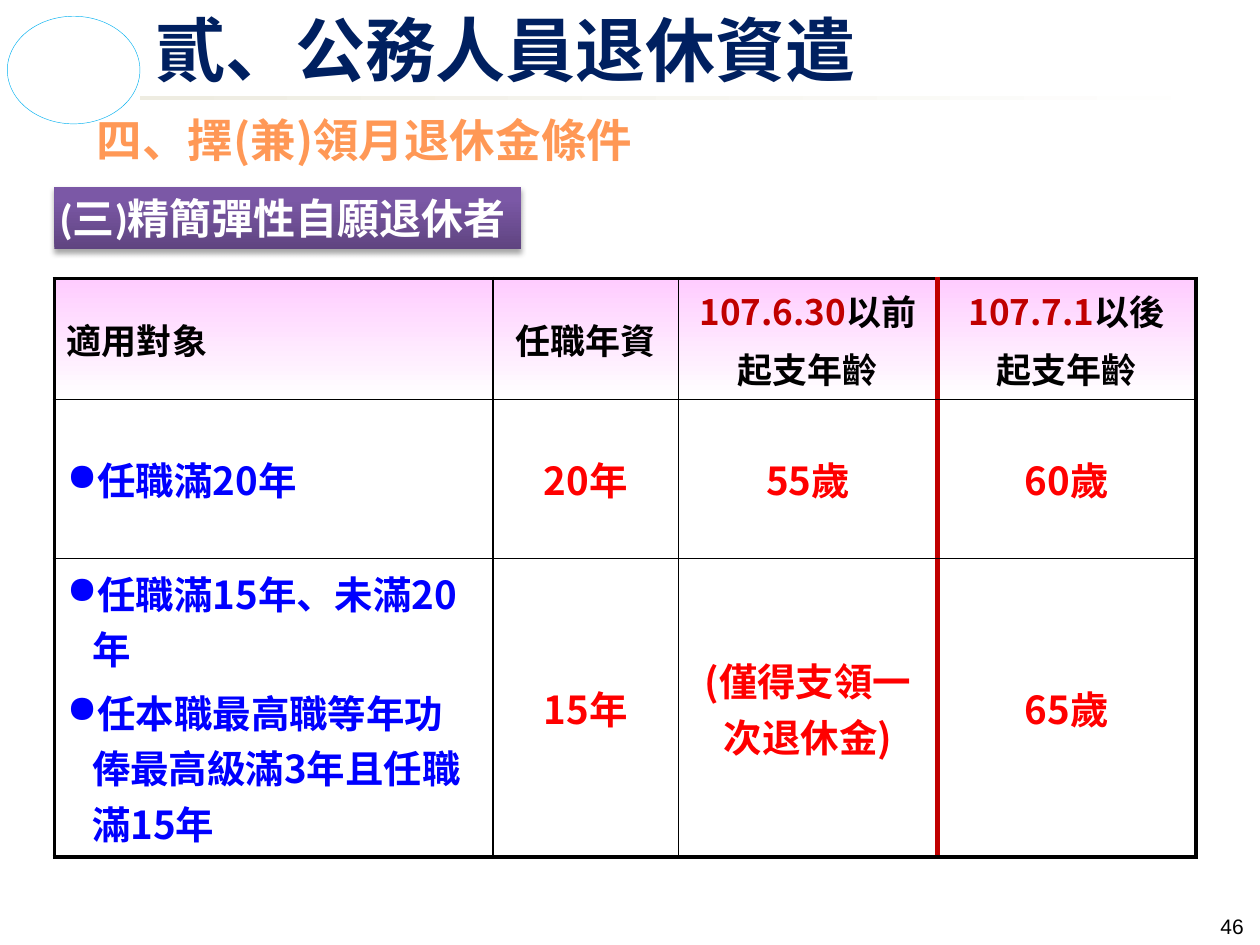
import pptx
import pptx.util
import pptx.dml.color
import pptx.enum.shapes
import pptx.enum.text
import pptx.oxml
from pptx.oxml.ns import qn, nsdecls

Pt = pptx.util.Pt
ALIGN = pptx.enum.text.PP_ALIGN
MIDDLE = pptx.enum.text.MSO_ANCHOR.MIDDLE
SHAPE = pptx.enum.shapes.MSO_SHAPE

# Content
TITLE = "貳、公務人員退休資遣"
SUBTITLE = "四、擇(兼)領月退休金條件"
BANNER = "(三)精簡彈性自願退休者 "
PAGE_NUMBER = "46"
# Each cell is a list of paragraphs; a paragraph is a list of (text, colour)
HEADER = [
    [[("適用對象", "black")]],
    [[("任職年資", "black")]],
    [[("107.6.30", "crimson"), ("以前", "black")], [("起支年齡", "black")]],
    [[("107.7.1", "crimson"), ("以後", "black")], [("起支年齡", "black")]],
]
BODY = [
    [["任職滿20年"], "20年", "55歲", "60歲"],
    [["任職滿15年、未滿20年", "任本職最高職等年功俸最高級滿3年且任職滿15年"],
     "15年", "(僅得支領一次退休金)", "65歲"],
]
COLUMNS = [250.8, 106, 147.8, 147.8]
ROWS = [65.5, 90.7, 164.9]
RED_EDGE = 3  # the column edge that parts old rules from new

FONT = "Noto Sans CJK SC"
COLOURS = {
    "black": "000000", "white": "FFFFFF", "crimson": "C00000", "red": "FF0000",
    "blue": "0000FF", "navy": "002060", "orange": "FF9856", "sky": "00B0F0",
    "cream": "EEECE1", "pink": "FFCCFF", "plum": "5F4480", "violet": "7B58A6",
}


def rgb(name):
    return pptx.dml.color.RGBColor.from_string(COLOURS[name])


def set_gradient(fill, first, last, angle, end=1):
    fill.gradient()
    fill.gradient_angle = angle
    for stop, name, position in zip(fill.gradient_stops, (first, last), (0, end)):
        stop.color.rgb = rgb(name)
        stop.position = position


def style(para, size, colour, bold=True, font=FONT, align=ALIGN.LEFT):
    para.alignment = align
    face = para.font
    face.size, face.bold, face.name = Pt(size), bold, font
    if colour:
        face.color.rgb = rgb(colour)
    latin = para._p.pPr.find(qn("a:defRPr")).find(qn("a:latin"))
    latin.addnext(pptx.oxml.parse_xml(
        f'<a:ea {nsdecls("a")} typeface="{FONT}"/>'))


def add_text(page, place, text, size, colour, anchor=None, **look):
    box = page.shapes.add_textbox(*map(Pt, place))
    frame = box.text_frame
    frame.word_wrap = True
    frame.vertical_anchor = anchor
    frame.text = text
    style(frame.paragraphs[0], size, colour, **look)


def add_bullet(para):
    props = para._p.get_or_add_pPr()
    props.set("marL", str(Pt(14.4)))
    props.set("indent", str(-Pt(14.4)))
    props.append(pptx.oxml.parse_xml(f'<a:buChar {nsdecls("a")} char="●"/>'))


def set_border(cell, side, colour, width):
    cell._tc.get_or_add_tcPr().append(pptx.oxml.parse_xml(
        f'<a:ln{side} {nsdecls("a")} w="{Pt(width)}"><a:solidFill>'
        f'<a:srgbClr val="{COLOURS[colour]}"/></a:solidFill></a:ln{side}>'))


def border_cell(cell, row, column):
    def upright(edge):
        if edge == RED_EDGE:
            return "crimson", 3
        return "black", 2.25 if edge in (0, len(COLUMNS)) else 1

    def level(edge):
        return "black", 2.25 if edge in (0, len(ROWS)) else 1

    set_border(cell, "L", *upright(column))
    set_border(cell, "R", *upright(column + 1))
    set_border(cell, "T", *level(row))
    set_border(cell, "B", *level(row + 1))


def fill_cell(cell, paragraphs, size, align, bulleted):
    cell.vertical_anchor = MIDDLE
    frame = cell.text_frame
    for index, spans in enumerate(paragraphs):
        para = frame.add_paragraph() if index else frame.paragraphs[0]
        if index:
            para.space_before = Pt(size * 0.2)
        if bulleted:
            add_bullet(para)
        shared = spans[0][1] if len(spans) == 1 else None
        style(para, size, shared, align=align)
        for text, colour in spans:
            span = para.add_run()
            span.text = text
            if not shared:
                span.font.color.rgb = rgb(colour)


def add_rules_table(page):
    table = page.shapes.add_table(len(ROWS), len(COLUMNS), Pt(31), Pt(159.1),
                                  Pt(sum(COLUMNS)), Pt(sum(ROWS))).table
    table.first_row = table.horz_banding = False
    for column, width in zip(table.columns, COLUMNS):
        column.width = Pt(width)
    for row, height in zip(table.rows, ROWS):
        row.height = Pt(height)

    grid = [HEADER]
    for listed, *values in BODY:
        grid.append([[[(text, "blue")] for text in listed]]
                    + [[[(text, "red")]] for text in values])
    for r, cells in enumerate(grid):
        for c, paragraphs in enumerate(cells):
            cell = table.cell(r, c)
            border_cell(cell, r, c)
            if r == 0:
                set_gradient(cell.fill, "pink", "white", 270)
            else:
                cell.fill.solid()
                cell.fill.fore_color.rgb = rgb("white")
            align = ALIGN.CENTER if c else (ALIGN.LEFT if r else ALIGN.JUSTIFY)
            fill_cell(cell, paragraphs, 22 if r else 20, align, r > 0 and c == 0)


def add_plain_shape(page, kind, place):
    shape = page.shapes.add_shape(kind, *map(Pt, place))
    shape.shadow.inherit = False
    shape.line.fill.background()
    return shape


def main():
    deck = pptx.Presentation()
    deck.slide_width, deck.slide_height = Pt(720), Pt(540)
    page = deck.slides.add_slide(deck.slide_layouts[6])

    # Heading rule and emblem outline
    rule = add_plain_shape(page, SHAPE.RECTANGLE, (80, 54.8, 631.4, 2.4))
    set_gradient(rule.fill, "cream", "white", 0)
    emblem = add_plain_shape(page, SHAPE.OVAL, (4.2, 9.3, 75.8, 61.5))
    emblem.fill.background()
    emblem.line.color.rgb = rgb("sky")
    emblem.line.width = Pt(0.25)

    # Section banner
    banner = add_plain_shape(page, SHAPE.RECTANGLE, (31, 106.6, 266.6, 36))
    set_gradient(banner.fill, "plum", "violet", 90, end=0.8)
    banner._element.spPr.find(qn("a:effectLst")).append(pptx.oxml.parse_xml(
        f'<a:outerShdw {nsdecls("a")} blurRad="{Pt(3.1)}" dist="{Pt(1.8)}" '
        'dir="5400000" rotWithShape="0"><a:srgbClr val="000000">'
        '<a:alpha val="35000"/></a:srgbClr></a:outerShdw>'))
    frame = banner.text_frame
    frame.word_wrap = False
    frame.vertical_anchor = MIDDLE
    frame.text = BANNER
    style(frame.paragraphs[0], 24, "white", font="Calibri", align=ALIGN.CENTER)

    # Table, page number and headings
    add_rules_table(page)
    add_text(page, (681, 518.4, 36.8, 20), PAGE_NUMBER, 12, "black",
             bold=False, font="Arial", align=ALIGN.RIGHT)
    add_text(page, (82, 2.2, 612.8, 51.2), TITLE, 40, "navy", anchor=MIDDLE)
    add_text(page, (48.2, 60.5, 625, 46), SUBTITLE, 26, "orange")

    deck.save("out.pptx")


if __name__ == "__main__":
    main()
